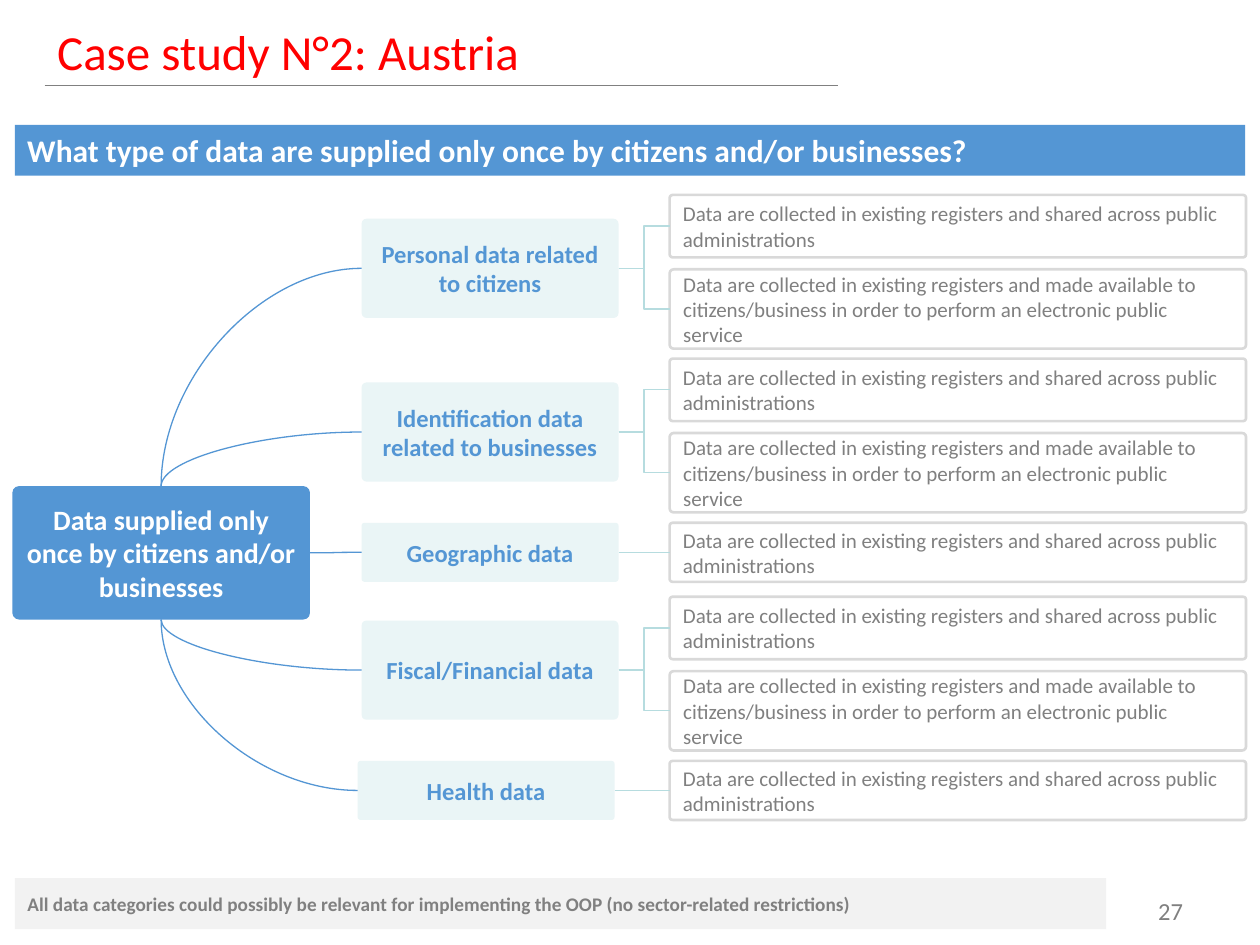
import lxml.etree
import pptx
import pptx.dml.color
import pptx.enum.shapes
import pptx.enum.text
import pptx.oxml.ns
import pptx.util

Cm = pptx.util.Cm
Pt = pptx.util.Pt
SHAPE = pptx.enum.shapes.MSO_SHAPE
CONNECTOR = pptx.enum.shapes.MSO_CONNECTOR
ALIGN = pptx.enum.text.PP_ALIGN
ANCHOR = pptx.enum.text.MSO_ANCHOR

TOP, LEFT, BOTTOM, RIGHT = range(4)
BLUE, PALE, TEAL = "5496D4", "EAF5F6", "B6DCDF"
GREY, LIGHT_GREY, FOOTER_GREY = "808080", "D9D9D9", "F2F2F2"
WHITE, RED = "FFFFFF", "FF0000"

SHARED = "Data are collected in existing registers and shared across public administrations"
AVAILABLE = (
    "Data are collected in existing registers and made available to "
    "citizens/business in order to perform an electronic public service"
)
CATEGORIES = [
    ("Personal data related to citizens", 3.93, [SHARED, AVAILABLE], TOP, 0),
    ("Identification data related to businesses", 7.23, [SHARED, AVAILABLE], TOP, 0),
    ("Geographic data", 10.54, [SHARED], RIGHT, 0),
    ("Fiscal/Financial data", 12.03, [SHARED, AVAILABLE], BOTTOM, 0),
    ("Health data", 15.34, [SHARED], BOTTOM, -0.08),
]


def colour(value):
    """Return the colour for a hex string."""
    return pptx.dml.color.RGBColor.from_string(value)


def place(shape, box):
    """Move and size a shape to a box given in centimetres."""
    shape.left, shape.top, shape.width, shape.height = map(Cm, box)


def write(shape, text, size, ink, bold=False, align=ALIGN.LEFT, anchor=ANCHOR.MIDDLE):
    """Fill a shape with one formatted paragraph."""
    frame = shape.text_frame
    frame.text = text
    frame.word_wrap = True
    frame.auto_size = pptx.enum.text.MSO_AUTO_SIZE.NONE
    frame.vertical_anchor = anchor
    paragraph = frame.paragraphs[0]
    paragraph.alignment = align
    for run in paragraph.runs:
        run.font.name = "Calibri"
        run.font.size = Pt(size)
        run.font.bold = bold
        run.font.color.rgb = colour(ink)


def add_panel(slide, kind, box, fill=None, outline=None):
    """Add a flat preset shape with an optional fill and outline."""
    shape = slide.shapes.add_shape(kind, *map(Cm, box))
    shape.shadow.inherit = False
    if fill:
        shape.fill.solid()
        shape.fill.fore_color.rgb = colour(fill)
    else:
        shape.fill.background()
    if outline:
        shape.line.color.rgb = colour(outline)
        shape.line.width = Pt(1.5)
    else:
        shape.line.fill.background()
    return shape


def add_node(slide, box, text, size, ink, fill=None, outline=None, bold=True, align=ALIGN.CENTER):
    """Add one rounded box of the tree."""
    node = add_panel(slide, SHAPE.ROUNDED_RECTANGLE, box, fill, outline)
    node.adjustments[0] = 0.05
    frame = node.text_frame
    frame.margin_left = frame.margin_right = Cm(0.25)
    frame.margin_top = frame.margin_bottom = Cm(0.2)
    write(node, text, size, ink, bold, align)
    return node


def add_line(slide, kind, ink, ends=(0, 0, 0, 0)):
    """Add a thin connector without a shadow."""
    connector = slide.shapes.add_connector(kind, *map(Cm, ends))
    connector.line.color.rgb = colour(ink)
    connector.line.width = Pt(0.75)
    lxml.etree.SubElement(connector._element.spPr, pptx.oxml.ns.qn("a:effectLst"))
    return connector


def join(slide, kind, ink, start, start_side, end, end_side):
    """Connect the sides of two nodes."""
    connector = add_line(slide, kind, ink)
    connector.begin_connect(start, start_side)
    connector.end_connect(end, end_side)
    return connector


def add_header(slide, box):
    """Place the title with its rule along the bottom of the box."""
    left, top, width, height = box
    place(slide.shapes.title, box)
    write(slide.shapes.title, "Case study N°2: Austria", 28, RED)
    add_line(slide, CONNECTOR.STRAIGHT, GREY, (left, top + height, left + width, top + height))


def add_banner(slide, box):
    """Place the question banner."""
    banner = add_panel(slide, SHAPE.RECTANGLE, box, BLUE)
    question = "What type of data are supplied only once by citizens and/or businesses?"
    write(banner, question, 18, WHITE, bold=True)


def add_category(slide, box, text, details):
    """Place a category with its details and return the category node."""
    left, top, width, height = box
    paired = len(details) > 1
    branch_top, branch_height = (top + 0.48, 2) if paired else (top, height)
    branch = add_node(slide, (left, branch_top, 5.18, branch_height), text, 14, BLUE, PALE)
    rows = [(0, 1.26), (1.5, 1.6)] if paired else [(0, height)]
    kind = CONNECTOR.ELBOW if paired else CONNECTOR.STRAIGHT
    for detail, (offset, detail_height) in zip(details, rows):
        detail_box = (left + width - 11.62, top + offset, 11.62, detail_height)
        leaf = add_node(slide, detail_box, detail, 12, GREY,
                        outline=LIGHT_GREY, bold=False, align=ALIGN.LEFT)
        join(slide, kind, TEAL, branch, RIGHT, leaf, LEFT)
    return branch


def add_tree(slide, box):
    """Place the root on the left of the box and join every category to it."""
    left, top, width, height = box
    root_box = (left, top + 5.87, 6, 2.69)
    root = add_node(slide, root_box, "Data supplied only once by citizens and/or businesses",
                    16, WHITE, BLUE)
    for text, row_top, details, root_side, shift in CATEGORIES:
        row_height = 3.1 if len(details) > 1 else 1.19
        row_left = left + 7.04 + shift
        row_box = (row_left, row_top, left + width - row_left, row_height)
        branch = add_category(slide, row_box, text, details)
        curve = join(slide, CONNECTOR.CURVE, BLUE, branch, LEFT, root, root_side)
        if root_side != RIGHT:
            geometry = curve._element.spPr.find(pptx.oxml.ns.qn("a:prstGeom"))
            geometry.set("prst", "curvedConnector2")


def add_footer(slide, box):
    """Place the remark bar and the slide number to its right."""
    left, top, width, height = box
    remark = slide.placeholders[1]
    place(remark, (left, top, 22, height))
    remark.fill.solid()
    remark.fill.fore_color.rgb = colour(FOOTER_GREY)
    remark.text_frame.text = ""
    write(remark, "All data categories could possibly be relevant for implementing "
          "the OOP (no sector-related restrictions)", 11, GREY, bold=True)
    paragraph = remark.text_frame.paragraphs[0]
    properties = paragraph._p.get_or_add_pPr()
    properties.set("marL", "0")
    properties.set("indent", "0")
    lxml.etree.SubElement(properties, pptx.oxml.ns.qn("a:buNone"))
    paragraph.space_before = Pt(0)
    number_box = (left + 22, top + 0.23, width - 22, 1.4)
    number = slide.shapes.add_textbox(*map(Cm, number_box))
    write(number, "27", 14, GREY, align=ALIGN.RIGHT, anchor=ANCHOR.TOP)


def main():
    """Build and save the slide."""
    presentation = pptx.Presentation()
    presentation.slide_width = Cm(25.4)
    presentation.slide_height = Cm(19.05)
    slide = presentation.slides.add_slide(presentation.slide_layouts[1])
    add_header(slide, (0.9, 0.33, 16, 1.4))
    add_banner(slide, (0.3, 2.52, 24.8, 1.02))
    add_tree(slide, (0.25, 3.93, 24.87, 12.6))
    add_footer(slide, (0.3, 17.7, 23.8, 1.03))
    presentation.save("out.pptx")


if __name__ == "__main__":
    main()
